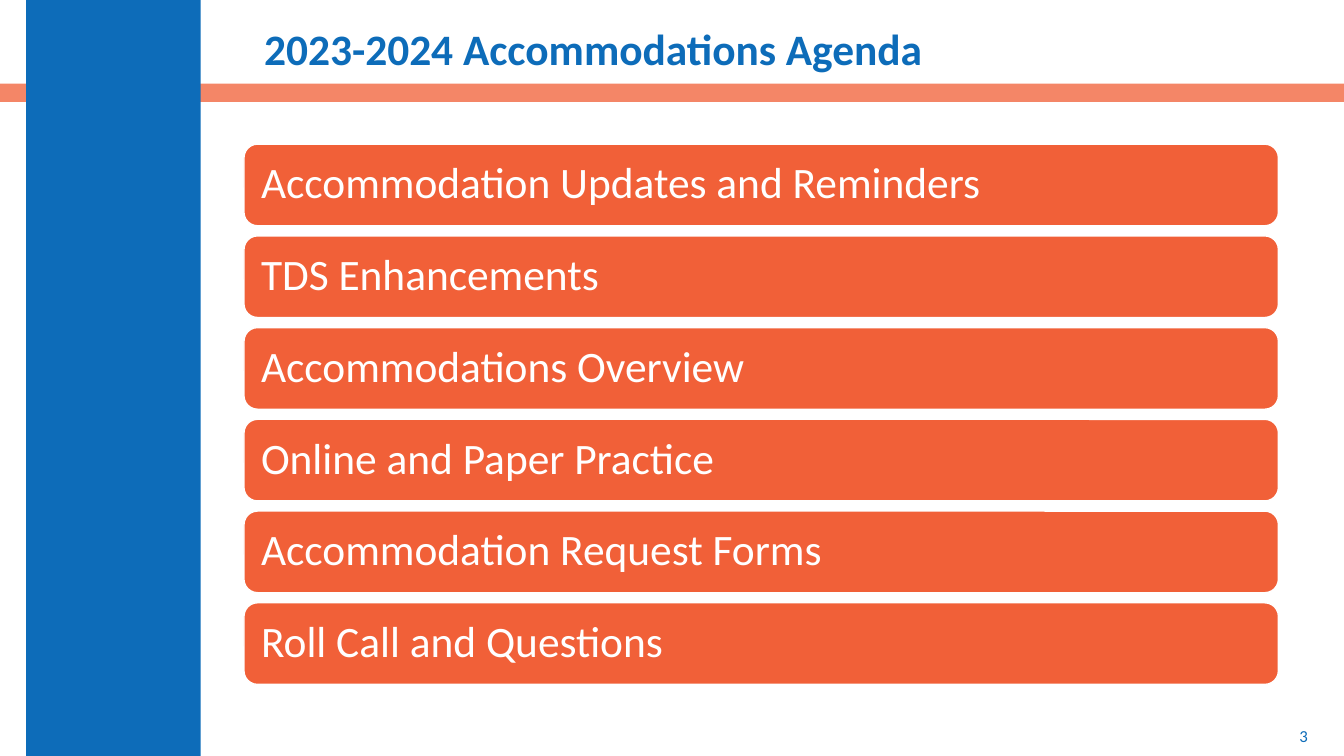
from pptx import Presentation
from pptx.dml.color import RGBColor
from pptx.enum.shapes import MSO_SHAPE as SHAPE
from pptx.enum.text import MSO_ANCHOR as ANCHOR, PP_ALIGN as ALIGN
from pptx.oxml.ns import qn
from pptx.util import Inches, Pt
from lxml import etree

# Content
TITLE = "2023-2024 Accommodations Agenda"
AGENDA = [
    "Accommodation Updates and Reminders",
    "TDS Enhancements",
    "Accommodations Overview",
    "Online and Paper Practice",
    "Accommodation Request Forms",
    "Roll Call and Questions",
]
PAGE = "3"

# Style and layout
BLUE = RGBColor(0x0D, 0x6C, 0xB9)
ORANGE = RGBColor(0xF1, 0x60, 0x38)
WHITE = RGBColor(0xFF, 0xFF, 0xFF)
FONT = "Calibri"
LEFT, TOP, WIDTH, HEIGHT, PITCH = 2.42, 1.43, 10.26, 0.81, 0.91


def add_block(s, kind, x, y, w, h, color):
    sp = s.shapes.add_shape(kind, Inches(x), Inches(y), Inches(w), Inches(h))
    sp.shadow.inherit = False
    sp.fill.solid()
    sp.fill.fore_color.rgb = color
    sp.line.fill.background()
    return sp


def add_label(sp, text, size, color, align=ALIGN.LEFT, bold=False, inset=0.1, spacing=0.9):
    tf = sp.text_frame
    tf.word_wrap = True
    tf.vertical_anchor = ANCHOR.MIDDLE
    tf.margin_left = tf.margin_right = Inches(inset)
    tf.margin_top = tf.margin_bottom = Inches(0.05)
    p = tf.paragraphs[0]
    p.text = text
    p.alignment = align
    p.line_spacing = spacing
    p.font.name, p.font.size, p.font.bold = FONT, Pt(size), bold
    p.font.color.rgb = color


def main():
    prs = Presentation()
    prs.slide_width, prs.slide_height = Inches(13.33), Inches(7.5)
    s = prs.slides.add_slide(prs.slide_layouts[6])

    # Translucent stripe and side band
    stripe = add_block(s, SHAPE.RECTANGLE, 0, 0.83, 13.33, 0.18, ORANGE)
    clr = stripe.fill._xPr.find(".//" + qn("a:srgbClr"))
    etree.SubElement(clr, qn("a:alpha"), val="76000")
    add_block(s, SHAPE.RECTANGLE, 0.26, 0, 1.73, 7.5, BLUE)

    # Title and page number
    title = s.shapes.add_textbox(Inches(LEFT), Inches(0.22), Inches(10.41), Inches(0.59))
    add_label(title, TITLE, 31, BLUE, bold=True, inset=0.2)
    number = s.shapes.add_textbox(Inches(10.07), Inches(7.1), Inches(3), Inches(0.4))
    add_label(number, PAGE, 12, BLUE, align=ALIGN.RIGHT, spacing=1.0)

    # Agenda bars
    for i, item in enumerate(AGENDA):
        bar = add_block(s, SHAPE.ROUNDED_RECTANGLE, LEFT, TOP + i * PITCH, WIDTH, HEIGHT, ORANGE)
        bar.line.color.rgb = WHITE
        bar.line.width = Pt(1)
        add_label(bar, item, 31, WHITE, inset=0.13)

    prs.save("out.pptx")


if __name__ == "__main__":
    main()
